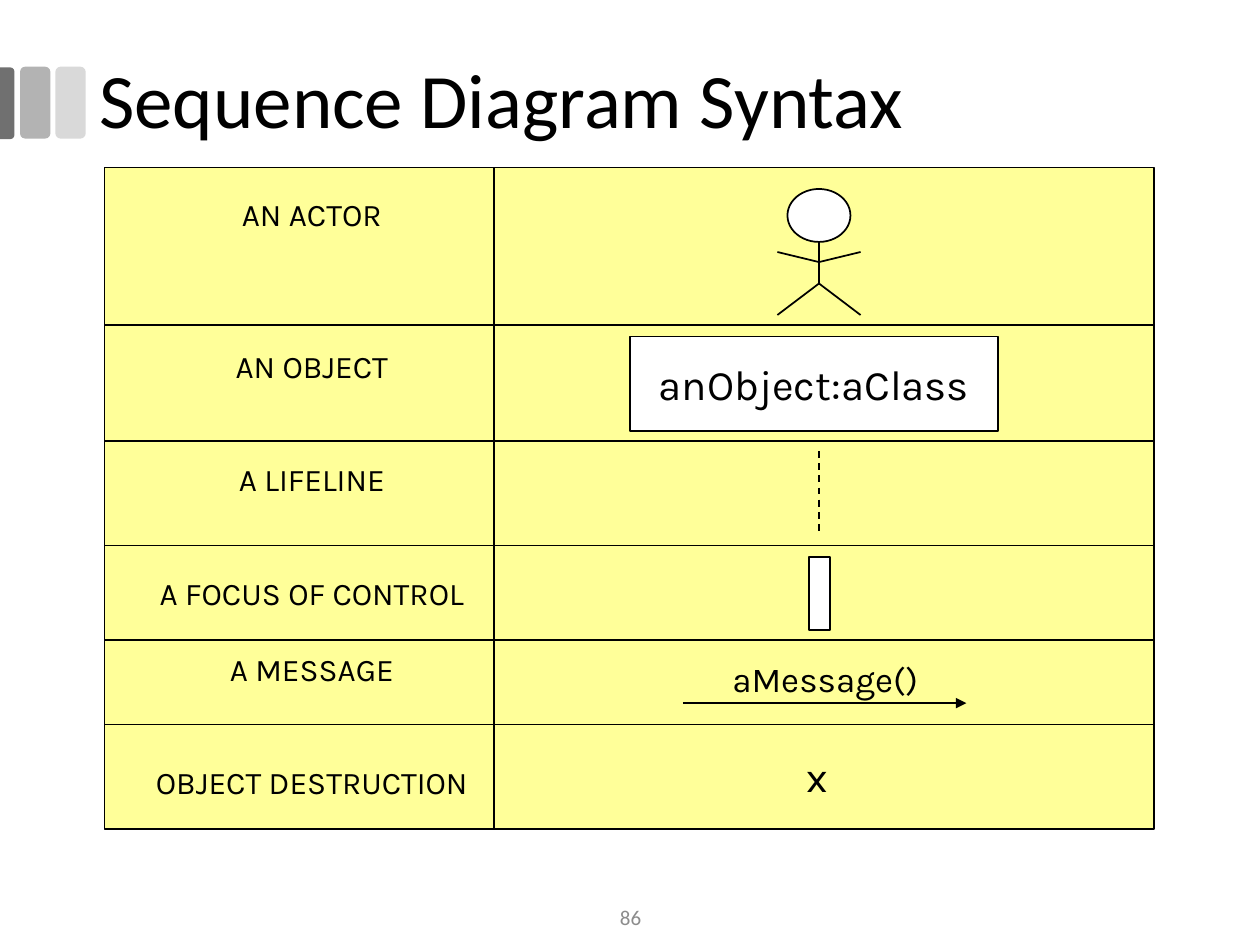
from dataclasses import dataclass
from itertools import accumulate

from lxml import etree
from pptx import Presentation
from pptx.dml.color import RGBColor
from pptx.enum import dml, shapes, text
from pptx.oxml.ns import qn
from pptx.util import Inches, Pt


@dataclass(frozen=True)
class Theme:
    ink: str = "000000"
    paper: str = "FFFFFF"
    panel: str = "FFFF99"
    muted: str = "8C8C8C"
    markers: tuple = ("D9D9D9", "B3B3B3", "707070")
    head_font: str = "Calibri"
    body_font: str = "Karla"
    title: int = 44
    object: int = 24
    message: int = 20
    label: int = 18
    number: int = 12
    line: int = 1


T = Theme()
SHAPE = shapes.MSO_SHAPE
MIDDLE = text.MSO_ANCHOR.MIDDLE
CENTER = text.PP_ALIGN.CENTER

# Table grid, in inches
TABLE = (0.83, 1.33, 8.33, 5.25)
LABEL_WIDTH = 3.09
ROW_HEIGHTS = (1.25, 0.92, 0.83, 0.75, 0.67, 0.83)
AXIS = 2.58  # centre of the symbols, from the left of the symbol column
LINE_PITCH = 21.65  # height of one label line, in points

# Each label with the number of lines left free above it
LABELS = (
    ("AN ACTOR", 0),
    ("AN OBJECT", 3),
    ("A LIFELINE", 2),
    ("A FOCUS OF CONTROL", 2),
    ("A MESSAGE", 1),
    ("OBJECT DESTRUCTION", 2),
)


def set_all(target, values):
    for name, value in values.items():
        setattr(target, name, value)


def add_box(parent, kind, box, fill, line=T.ink):
    sp = parent.add_shape(kind, *map(Inches, box))
    sp.shadow.inherit = False
    sp.fill.solid()
    sp.fill.fore_color.rgb = RGBColor.from_string(fill)
    if line:
        sp.line.color.rgb = RGBColor.from_string(line)
        sp.line.width = Pt(T.line)
    else:
        sp.line.fill.background()
    return sp


def add_line(parent, x1, y1, x2, y2):
    ln = parent.add_connector(shapes.MSO_CONNECTOR.STRAIGHT,
                              *map(Inches, (x1, y1, x2, y2)))
    ln.line.color.rgb = RGBColor.from_string(T.ink)
    ln.line.width = Pt(T.line)
    etree.SubElement(ln._element.spPr, qn("a:effectLst"))
    return ln


def write(sp, lines, size, font=T.body_font, color=T.ink, frame=None, para=None):
    """Write (wording, space before in points) pairs into a shape."""
    tf = sp.text_frame
    set_all(tf, {"word_wrap": True, **(frame or {})})
    for i, (wording, gap) in enumerate(lines):
        p = tf.paragraphs[0] if i == 0 else tf.add_paragraph()
        set_all(p, {"alignment": CENTER, **(para or {})})
        if gap:
            p.space_before = Pt(gap)
        r = p.add_run()
        r.text = wording
        set_all(r.font, {"name": font, "size": Pt(size)})
        r.font.color.rgb = RGBColor.from_string(color)


def add_text(s, box, lines, size, **style):
    write(s.shapes.add_textbox(*map(Inches, box)), lines, size, **style)


def draw_heading(s, box):
    x, y, w, h = box
    # Markers, from right to left; the last is cut by the slide edge
    group = s.shapes.add_group_shape().shapes
    for i, fill in enumerate(T.markers[:2]):
        add_box(group, SHAPE.ROUNDED_RECTANGLE,
                (x + 0.44 - 0.28 * i, y + 0.36, 0.24, 0.57), fill, None)
    edge = add_box(group, SHAPE.ROUND_2_SAME_RECTANGLE,
                   (x - 0.23, y + 0.59, 0.57, 0.12), T.markers[2], None)
    edge.rotation = 90
    edge.adjustments[0] = 0.292
    # Title
    add_text(s, (x + 0.69, y, w - 0.69, h), [("Sequence Diagram Syntax", 0)], T.title,
             font=T.head_font, frame={"vertical_anchor": MIDDLE},
             para={"alignment": text.PP_ALIGN.LEFT, "line_spacing": 0.9})


def draw_grid(s, box):
    x, y, w, h = box
    add_box(s.shapes, SHAPE.RECTANGLE, box, T.panel)
    add_line(s.shapes, x + LABEL_WIDTH, y, x + LABEL_WIDTH, y + h)
    for offset in accumulate(ROW_HEIGHTS[:-1]):
        add_line(s.shapes, x, y + offset, x + w, y + offset)


def draw_labels(s, box):
    x, y, w, h = box
    lines = [(label, free * LINE_PITCH) for label, free in LABELS]
    add_text(s, (x + 0.25, y + 0.17, w - 0.3, h - 0.34), lines, T.label,
             frame={"word_wrap": False})


def draw_actor(s, box):
    x, y = box[0] + AXIS, box[1]
    group = s.shapes.add_group_shape().shapes
    add_box(group, SHAPE.OVAL, (x - 0.25, y + 0.17, 0.5, 0.42), T.paper)
    add_line(group, x, y + 0.59, x, y + 0.92)
    for side in (-0.33, 0.33):
        add_line(group, x + side, y + 0.67, x, y + 0.75)  # arm
        add_line(group, x, y + 0.92, x + side, y + 1.17)  # leg


def draw_object(s, box):
    x, y, w, h = box
    sp = add_box(s.shapes, SHAPE.RECTANGLE, (x + 1.08, y + 0.09, 2.92, 0.75), T.paper)
    write(sp, [("anObject:aClass", 0)], T.object,
          frame={"word_wrap": False, "vertical_anchor": MIDDLE})


def draw_lifeline(s, box):
    x, y, w, h = box
    ln = add_line(s.shapes, x + AXIS, y + 0.08, x + AXIS, y + h - 0.08)
    ln.line.dash_style = dml.MSO_LINE.DASH


def draw_focus(s, box):
    x, y, w, h = box
    add_box(s.shapes, SHAPE.RECTANGLE, (x + AXIS - 0.08, y + 0.09, 0.17, 0.58), T.paper)


def draw_message(s, box):
    x, y, w, h = box
    arrow = add_line(s.shapes, x + 1.5, y + 0.5, x + 3.75, y + 0.5)
    etree.SubElement(arrow.line._get_or_add_ln(), qn("a:tailEnd"), type="triangle")
    add_text(s, (x + 1.5, y + 0.09, 2.26, 0.44), [("aMessage()", 0)], T.message)


def draw_destruction(s, box):
    x, y, w, h = box
    add_text(s, (x + AXIS - 0.2, y + 0.16, 0.37, 0.5), [("x", 0)], T.object,
             frame={"word_wrap": False})


def draw_table(s, box):
    x, y, w, h = box
    draw_grid(s, box)
    draw_labels(s, (x, y, LABEL_WIDTH, h))
    symbols = (draw_actor, draw_object, draw_lifeline,
               draw_focus, draw_message, draw_destruction)
    tops = accumulate(ROW_HEIGHTS, initial=y)
    for draw, top, height in zip(symbols, tops, ROW_HEIGHTS):
        draw(s, (x + LABEL_WIDTH, top, w - LABEL_WIDTH, height))


def draw_number(s, box):
    add_text(s, box, [("86", 0)], T.number, font=T.head_font, color=T.muted,
             frame={"vertical_anchor": MIDDLE})


def main():
    prs = Presentation()
    set_all(prs, {"slide_width": Inches(10), "slide_height": Inches(7.5)})
    s = prs.slides.add_slide(prs.slide_layouts[6])
    draw_heading(s, (0, 0.17, 9.31, 1.31))
    draw_table(s, TABLE)
    draw_number(s, (3.88, 7.08, 2.25, 0.4))
    prs.save("out.pptx")


if __name__ == "__main__":
    main()
